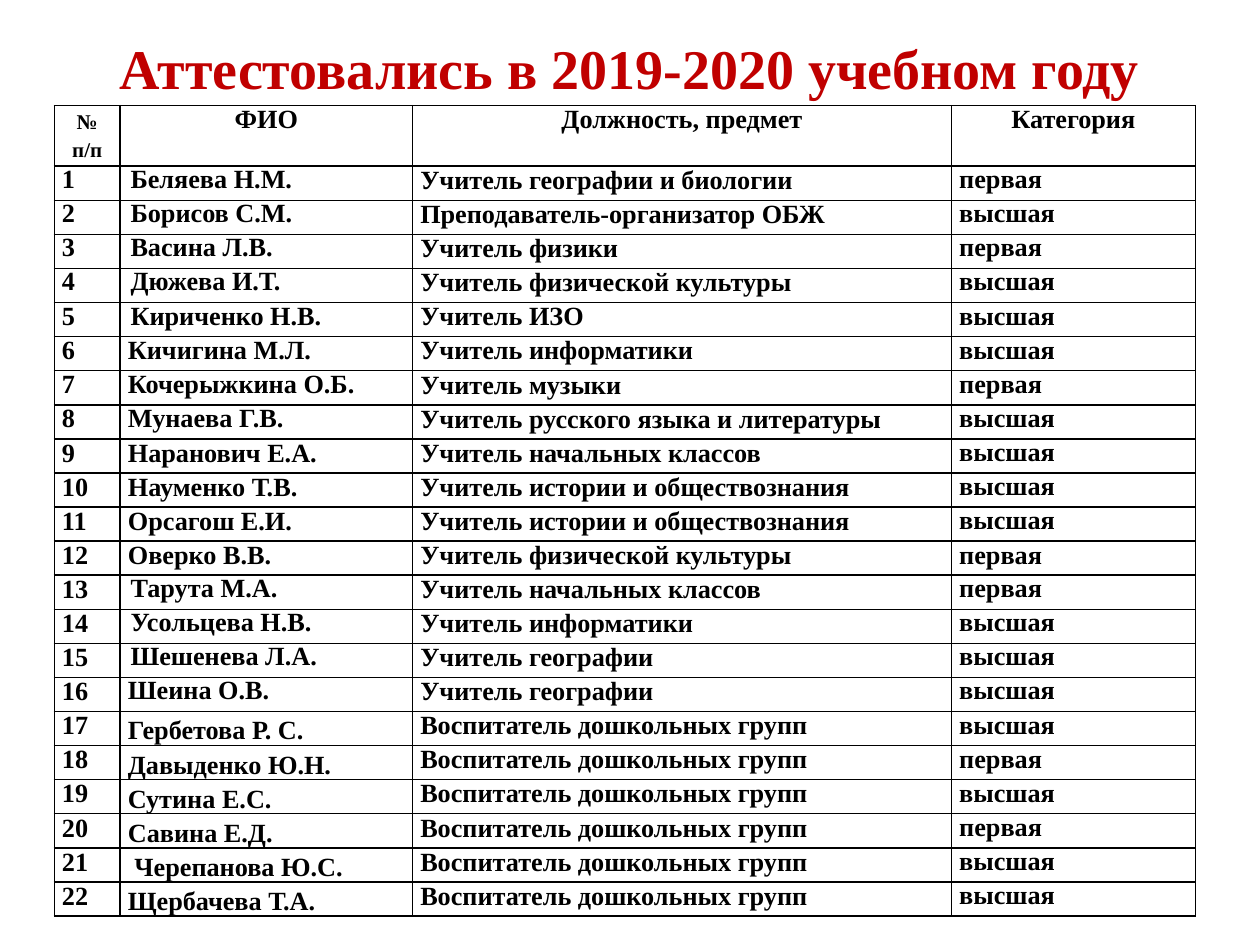
from lxml import etree
from pptx import Presentation
from pptx.dml.color import RGBColor
from pptx.enum import text
from pptx.oxml.ns import qn
from pptx.util import Pt

COLORS = {"title": "C00000", "ink": "000000"}
FONT = "Times New Roman"
LINE = 16.1
COL_WIDTHS = [37.7, 167.1, 308, 139.3]
HEADER_HEIGHT, ROW_HEIGHT = 34.6, 19.5
HEADERS = ["№ п/п", "ФИО", "Должность, предмет", "Категория"]
TOP, FIRST = "высшая", "первая"
GEOGRAPHY = "Учитель географии"
HISTORY = "Учитель истории и обществознания"
PRIMARY = "Учитель начальных классов"
SPORT = "Учитель физической культуры"
COMPUTING = "Учитель информатики"
PRESCHOOL = "Воспитатель дошкольных групп"
TEACHERS = [
    ("Беляева Н.М.", "Учитель географии и биологии", FIRST),
    ("Борисов С.М.", "Преподаватель-организатор ОБЖ", TOP),
    ("Васина Л.В.", "Учитель физики", FIRST),
    ("Дюжева И.Т.", SPORT, TOP),
    ("Кириченко Н.В.", "Учитель ИЗО", TOP),
    ("Кичигина М.Л.", COMPUTING, TOP),
    ("Кочерыжкина О.Б.", "Учитель музыки", FIRST),
    ("Мунаева Г.В.", "Учитель русского языка и литературы", TOP),
    ("Наранович Е.А.", PRIMARY, TOP),
    ("Науменко Т.В.", HISTORY, TOP),
    ("Орсагош Е.И.", HISTORY, TOP),
    ("Оверко В.В.", SPORT, FIRST),
    ("Тарута М.А.", PRIMARY, FIRST),
    ("Усольцева Н.В.", COMPUTING, TOP),
    ("Шешенева Л.А.", GEOGRAPHY, TOP),
    ("Шеина О.В.", GEOGRAPHY, TOP),
    ("Гербетова Р. С.", PRESCHOOL, TOP),
    ("Давыденко Ю.Н.", PRESCHOOL, FIRST),
    ("Сутина Е.С.", PRESCHOOL, TOP),
    ("Савина Е.Д.", PRESCHOOL, FIRST),
    ("Черепанова Ю.С.", PRESCHOOL, TOP),
    ("Щербачева Т.А.", PRESCHOOL, TOP),
]
# Left margin and first-line indent of names, by row number
NAME_INDENTS = {n: (18, -16.5) for n in (1, 2, 3, 4, 5, 13, 14, 15)}
NAME_INDENTS[21] = (3.75, 0)


class Deck:
    def __init__(self, slide, font):
        self.s, self.font = slide, font

    def style(self, p, size, color, centred=False):
        f = p.font
        f.name, f.size, f.bold = self.font, Pt(size), True
        f.color.rgb = RGBColor.from_string(COLORS[color])
        p.alignment = text.PP_ALIGN.CENTER if centred else text.PP_ALIGN.LEFT

    def title(self, words, x, y, w, h):
        tf = self.s.shapes.add_textbox(Pt(x), Pt(y), Pt(w), Pt(h)).text_frame
        tf.word_wrap = True
        tf.vertical_anchor = text.MSO_ANCHOR.MIDDLE
        p = tf.paragraphs[0]
        p.text = words
        self.style(p, 32, "title", centred=True)

    def table(self, x, y, widths, heights):
        t = self.s.shapes.add_table(len(heights), len(widths), Pt(x), Pt(y),
                                    Pt(sum(widths)), Pt(sum(heights))).table
        t.first_row = t.horz_banding = False
        for col, w in zip(t.columns, widths):
            col.width = Pt(w)
        for row, h in zip(t.rows, heights):
            row.height = Pt(h)
        return t

    def cell(self, c, words, size=15, centred=False, exact=True,
             indent=None, bottom=False):
        """Fill a bordered cell; exact fixes the line height."""
        c.margin_left = c.margin_right = Pt(4.4)
        c.margin_top = c.margin_bottom = 0
        c.vertical_anchor = text.MSO_ANCHOR.BOTTOM if bottom else text.MSO_ANCHOR.TOP
        p = c.text_frame.paragraphs[0]
        p.text = words
        self.style(p, size, "ink", centred)
        if exact:
            p.line_spacing = Pt(LINE)
        if indent:
            pPr = p._p.get_or_add_pPr()
            pPr.set("marL", str(Pt(indent[0])))
            pPr.set("indent", str(Pt(indent[1])))
        self.borders(c)
        c.fill.background()

    def borders(self, c):
        tcPr = c._tc.get_or_add_tcPr()
        for side in ("a:lnL", "a:lnR", "a:lnT", "a:lnB"):
            ln = etree.SubElement(tcPr, qn(side), w=str(Pt(1)))
            fill = etree.SubElement(ln, qn("a:solidFill"))
            etree.SubElement(fill, qn("a:srgbClr"), val=COLORS["ink"])


def main():
    prs = Presentation()
    prs.slide_width, prs.slide_height = Pt(720), Pt(540)
    deck = Deck(prs.slides.add_slide(prs.slide_layouts[6]), FONT)
    deck.title("Аттестовались в 2019-2020 учебном году", 36, 21.6, 648, 33)

    t = deck.table(31, 60.4, COL_WIDTHS,
                   [HEADER_HEIGHT] + [ROW_HEIGHT] * len(TEACHERS))
    for j, words in enumerate(HEADERS):
        deck.cell(t.cell(0, j), words, size=15 if j else 12, centred=True)
    for n, (name, post, category) in enumerate(TEACHERS, 1):
        deck.cell(t.cell(n, 0), str(n), exact=n < 9, indent=(27, -27))
        deck.cell(t.cell(n, 1), name, exact=not 9 <= n <= 12,
                  indent=NAME_INDENTS.get(n), bottom=n >= 17)
        deck.cell(t.cell(n, 2), post, exact=False)
        deck.cell(t.cell(n, 3), category, exact=n != 12)
    prs.save("out.pptx")


if __name__ == "__main__":
    main()
